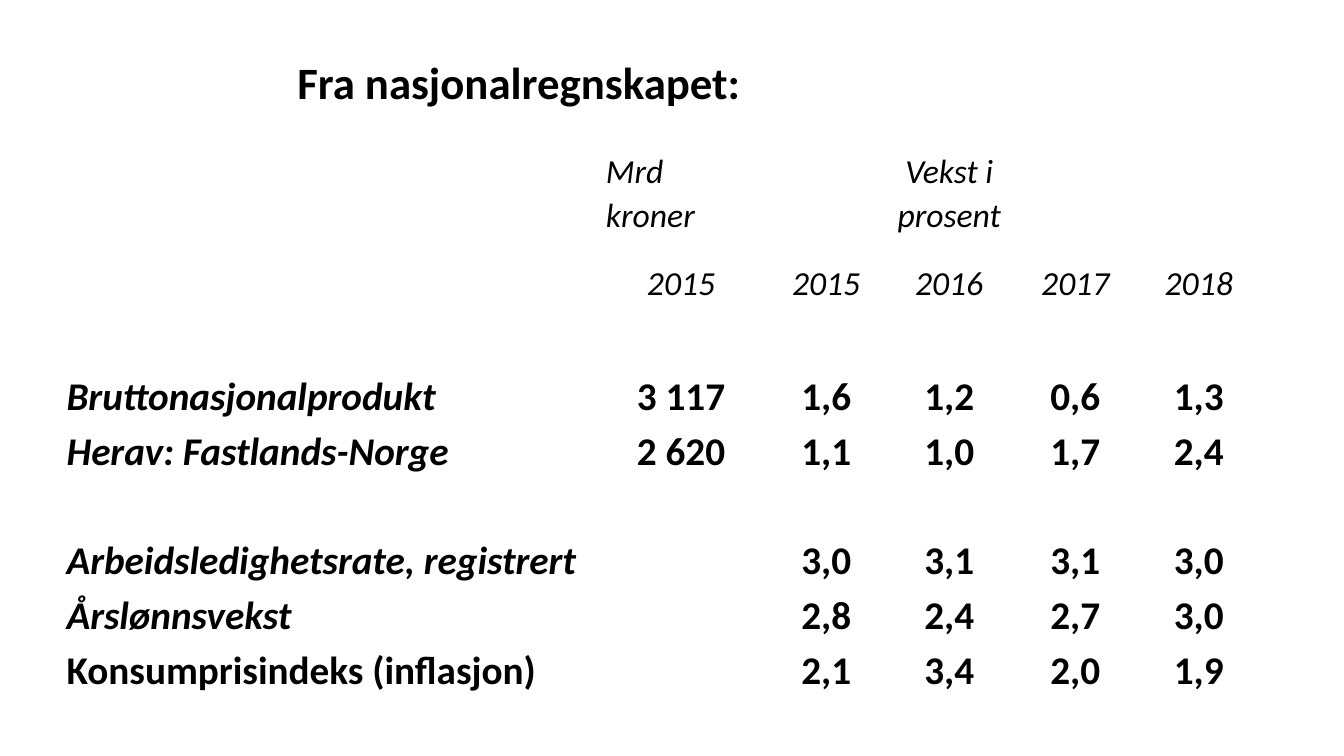
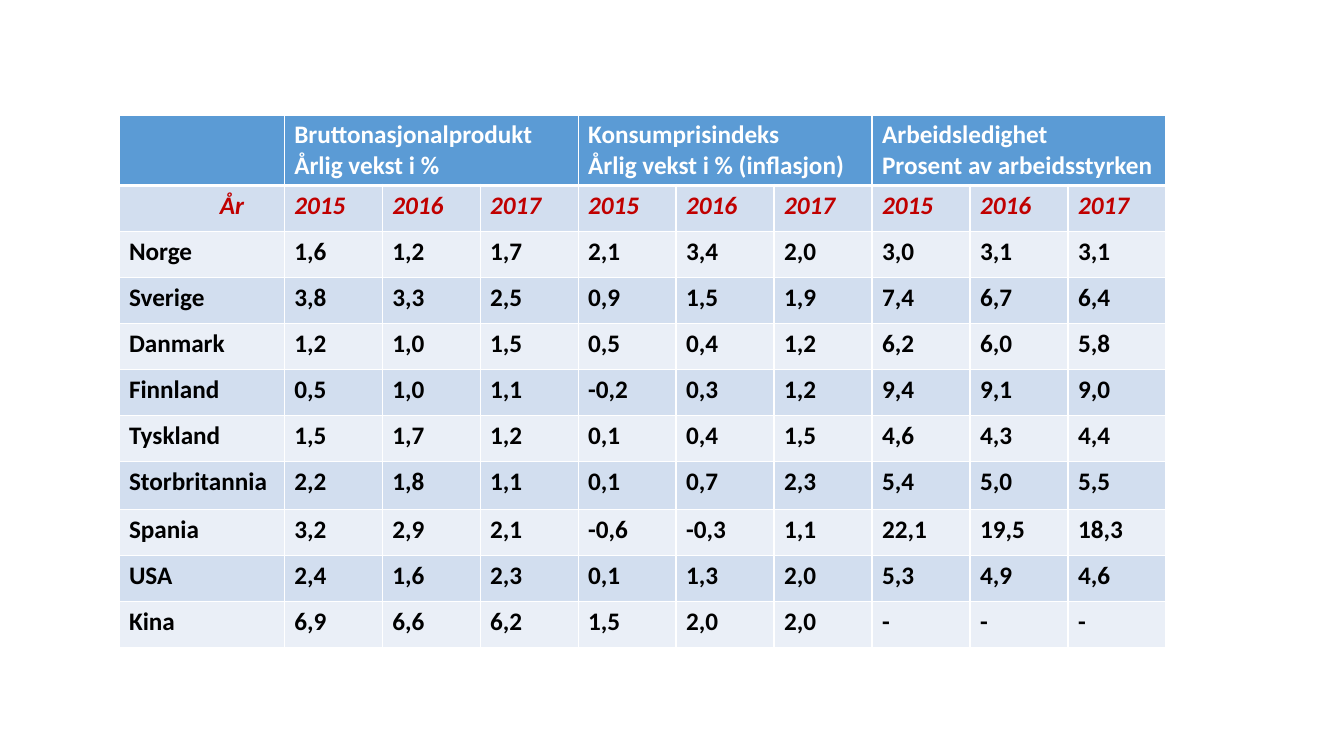
from lxml import etree
from pptx import Presentation
from pptx.dml.color import RGBColor
from pptx.enum.text import MSO_ANCHOR, MSO_AUTO_SIZE, PP_ALIGN
from pptx.oxml.ns import qn
from pptx.util import Inches, Pt

LEFT, MID, RIGHT = PP_ALIGN.LEFT, PP_ALIGN.CENTER, PP_ALIGN.RIGHT
MIDDLE = MSO_ANCHOR.MIDDLE
GROW = MSO_AUTO_SIZE.SHAPE_TO_FIT_TEXT
FONT = "Calibri"
HUES = {
    "ink": "000000",
    "white": "FFFFFF",
    "red": "C00000",
    "head": "5B9BD5",
    "dark": "D2DEEF",
    "light": "EAEFF7",
}
PLAIN = "{2D5ABB26-0587-4C30-8999-92F81FD0307C}"

deck = Presentation()
deck.slide_width = Inches(13.33)
deck.slide_height = Inches(7.5)
COL = deck.slide_width / 100
ROW = deck.slide_height / 100
blank = deck.slide_layouts[6]


def write(frame, text, size, hue="ink", bold=True, slant=False, align=LEFT, lead=None):
    frame.text = text
    for para in frame.paragraphs:
        para.alignment = align
        para.line_spacing = lead
        font = para.font
        font.name, font.size = FONT, Pt(size)
        font.bold, font.italic = bold, slant
        font.color.rgb = RGBColor.from_string(HUES[hue])


def add_grid(slide, left, top, cols, rows):
    frame = slide.shapes.add_table(
        len(rows), len(cols), int(left * COL), int(top * ROW),
        int(sum(cols) * COL), int(sum(rows) * ROW))
    table = frame.table
    table.first_row = table.horz_banding = False
    table._tbl.tblPr.find(qn("a:tableStyleId")).text = PLAIN
    for col, wide in zip(table.columns, cols):
        col.width = int(wide * COL)
    for row, high in zip(table.rows, rows):
        row.height = int(high * ROW)
    return table


slide = deck.slides.add_slide(blank)
facts = [
    ["", "Mrd kroner", "", "Vekst i prosent", "", ""],
    ["", "2015", "2015", "2016", "2017", "2018"],
    [""] * 6,
    ["Bruttonasjonalprodukt", "3 117", "1,6", "1,2", "0,6", "1,3"],
    ["Herav: Fastlands-Norge", "2 620", "1,1", "1,0", "1,7", "2,4"],
    [""] * 6,
    ["Arbeidsledighetsrate, registrert", "", "3,0", "3,1", "3,1", "3,0"],
    ["Årslønnsvekst", "", "2,8", "2,4", "2,7", "3,0"],
    ["Konsumprisindeks (inflasjon)", "", "2,1", "3,4", "2,0", "1,9"],
]
table = add_grid(slide, 4.43, 19.73, [40.13, 12.23, 9.38, 8.93, 9.83, 8.55],
                 [14.8] + [7.23] * 8)
last = len(facts) - 1
for r, line in enumerate(facts):
    head = r < 2
    for c, text in enumerate(line):
        cell = table.cell(r, c)
        cell.margin_left = cell.margin_right = Inches(0.07)
        cell.margin_top = cell.margin_bottom = 0
        if text:
            flush = c == 0 or (r, c) == (0, 1)
            write(cell.text_frame, text, 24 if head else 28, bold=not head,
                  slant=head or (c == 0 and r < last),
                  align=LEFT if flush else MID, lead=1.07)

box = slide.shapes.add_textbox(int(21.38 * COL), int(6.53 * ROW),
                               int(34.73 * COL), int(8.53 * ROW))
frame = box.text_frame
frame.word_wrap = False
frame.auto_size = GROW
frame.vertical_anchor = MIDDLE
write(frame, "Fra nasjonalregnskapet:", 32)

slide = deck.slides.add_slide(blank)
heads = [
    "Bruttonasjonalprodukt\nÅrlig vekst i %",
    "Konsumprisindeks\nÅrlig vekst i % (inflasjon)",
    "Arbeidsledighet\nProsent av arbeidsstyrken",
]
lands = [
    [""] + [text for head in heads for text in (head, "", "")],
    ["År"] + ["2015", "2016", "2017"] * 3,
    ["Norge", "1,6", "1,2", "1,7", "2,1", "3,4", "2,0", "3,0", "3,1", "3,1"],
    ["Sverige", "3,8", "3,3", "2,5", "0,9", "1,5", "1,9", "7,4", "6,7", "6,4"],
    ["Danmark", "1,2", "1,0", "1,5", "0,5", "0,4", "1,2", "6,2", "6,0", "5,8"],
    ["Finnland", "0,5", "1,0", "1,1", "-0,2", "0,3", "1,2", "9,4", "9,1", "9,0"],
    ["Tyskland", "1,5", "1,7", "1,2", "0,1", "0,4", "1,5", "4,6", "4,3", "4,4"],
    ["Storbritannia", "2,2", "1,8", "1,1", "0,1", "0,7", "2,3", "5,4", "5,0", "5,5"],
    ["Spania", "3,2", "2,9", "2,1", "-0,6", "-0,3", "1,1", "22,1", "19,5", "18,3"],
    ["USA", "2,4", "1,6", "2,3", "0,1", "1,3", "2,0", "5,3", "4,9", "4,6"],
    ["Kina", "6,9", "6,6", "6,2", "1,5", "2,0", "2,0", "-", "-", "-"],
]
table = add_grid(slide, 8.85, 15.2, [12.3] + [7.29] * 9,
                 [9.3] + [6.09] * 6 + [6.3] + [6.09] * 3)
for c in (1, 4, 7):
    table.cell(0, c).merge(table.cell(0, c + 2))
for r, line in enumerate(lands):
    band = "head" if r == 0 else ("light", "dark")[r % 2]
    hue = ("white", "red")[r] if r < 2 else "ink"
    for c, text in enumerate(line):
        cell = table.cell(r, c)
        props = cell._tc.get_or_add_tcPr()
        for side in "LRTB":
            thick = (r, side) in ((0, "B"), (1, "T"))
            edge = etree.SubElement(props, qn("a:ln" + side), w=str(Pt(3 if thick else 1)))
            paint = etree.SubElement(edge, qn("a:solidFill"))
            etree.SubElement(paint, qn("a:srgbClr"), val=HUES["white"])
        cell.fill.solid()
        cell.fill.fore_color.rgb = RGBColor.from_string(HUES[band])
        if text:
            write(cell.text_frame, text, 18, hue, slant=r == 1)
year = table.cell(1, 0)
year.margin_right = Inches(0.4)
year.text_frame.paragraphs[0].alignment = RIGHT

deck.save("out.pptx")
